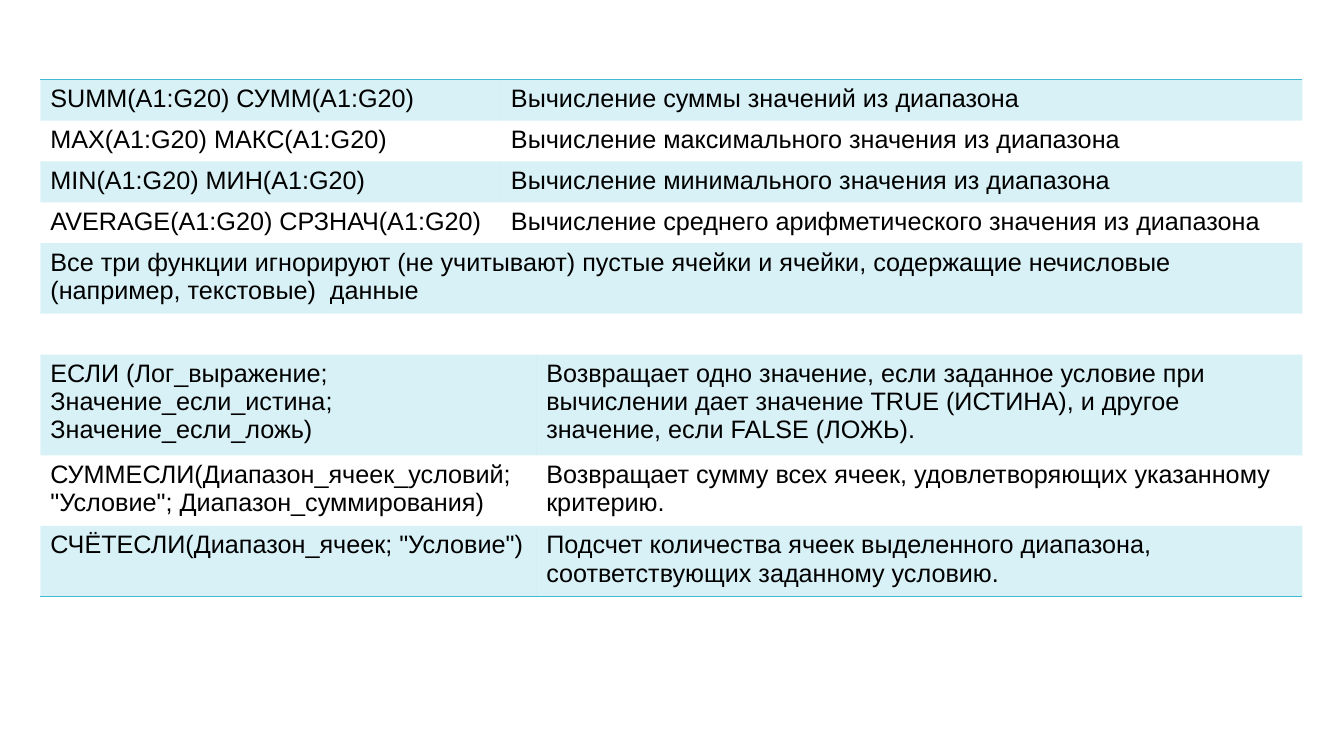
from lxml import etree
from pptx import Presentation
from pptx.dml.color import RGBColor
from pptx.oxml.ns import qn
from pptx.util import Pt

COLORS = {"accent": "40BAD2", "text": "000000"}
FONT = "Arial"
NO_STYLE = "{2D5ABB26-0587-4C30-8999-92F81FD0307C}"
COL_WIDTHS = [329, 25.2, 547.2]
LINE_HEIGHTS = {1: 29.2, 2: 50.4, 3: 72}

# Each row: number of text lines, then {first column: (columns spanned, text)}
ROWS = [
    (1, {0: (1, "SUMM(A1:G20) СУММ(A1:G20)"),
         1: (2, "Вычисление суммы значений из диапазона")}),
    (1, {0: (1, "MAX(A1:G20) МАКС(A1:G20)"),
         1: (2, "Вычисление максимального значения из диапазона")}),
    (1, {0: (1, "MIN(A1:G20) МИН(A1:G20)"),
         1: (2, "Вычисление минимального значения из диапазона")}),
    (1, {0: (1, "AVERAGE(A1:G20) СРЗНАЧ(A1:G20)"),
         1: (2, "Вычисление среднего арифметического значения из диапазона")}),
    (2, {0: (3, "Все три функции игнорируют (не учитывают) пустые ячейки и ячейки, "
                "содержащие нечисловые (например, текстовые)  данные")}),
    (1, {0: (2, ""), 2: (1, "")}),
    (3, {0: (2, "ЕСЛИ (Лог_выражение; Значение_если_истина; Значение_если_ложь)"),
         2: (1, "Возвращает одно значение, если заданное условие при вычислении дает "
                "значение TRUE (ИСТИНА), и другое значение, если FALSE (ЛОЖЬ).")}),
    (2, {0: (2, "СУММЕСЛИ(Диапазон_ячеек_условий; \"Условие\"; Диапазон_суммирования)"),
         2: (1, "Возвращает сумму всех ячеек, удовлетворяющих указанному критерию.")}),
    (2, {0: (2, "СЧЁТЕСЛИ(Диапазон_ячеек; \"Условие\")"),
         2: (1, "Подсчет количества ячеек выделенного диапазона, "
                "соответствующих заданному условию.")}),
]


def set_text(cell, text):
    p = cell.text_frame.paragraphs[0]
    p.text = text
    p.font.size = Pt(18)
    for r in p.runs:
        r.font.name = FONT
        r.font.size = Pt(18)
        r.font.color.rgb = RGBColor.from_string(COLORS["text"])


def set_fill(cell, tinted):
    """Fill a cell with the accent at 20 % opacity, or leave it clear."""
    if not tinted:
        cell.fill.background()
        return
    cell.fill.solid()
    cell.fill.fore_color.rgb = RGBColor.from_string(COLORS["accent"])
    color = cell._tc.tcPr.find(qn("a:solidFill")).find(qn("a:srgbClr"))
    etree.SubElement(color, qn("a:alpha"), val="20000")


def set_border(cell, side):
    ln = etree.Element(qn("a:" + side), w=str(Pt(1)))
    fill = etree.SubElement(ln, qn("a:solidFill"))
    etree.SubElement(fill, qn("a:srgbClr"), val=COLORS["accent"])
    cell._tc.get_or_add_tcPr().insert(0, ln)


def add_function_table(slide, left, top):
    heights = [LINE_HEIGHTS[lines] for lines, _ in ROWS]
    frame = slide.shapes.add_table(len(ROWS), len(COL_WIDTHS), Pt(left), Pt(top),
                                   Pt(sum(COL_WIDTHS)), Pt(sum(heights)))
    table = frame.table
    table.first_row = table.horz_banding = False
    table._tbl.tblPr.find(qn("a:tableStyleId")).text = NO_STYLE
    for column, width in zip(table.columns, COL_WIDTHS):
        column.width = Pt(width)
    for i, (_, entries) in enumerate(ROWS):
        table.rows[i].height = Pt(heights[i])
        for cell in table.rows[i].cells:
            set_fill(cell, i % 2 == 0)
            if i == 0:
                set_border(cell, "lnT")
            if i == len(ROWS) - 1:
                set_border(cell, "lnB")
        for j, (span, text) in entries.items():
            cell = table.cell(i, j)
            if span > 1:
                cell.merge(table.cell(i, j + span - 1))
            set_text(cell, text)


def main():
    prs = Presentation()
    prs.slide_width, prs.slide_height = Pt(960), Pt(540)
    slide = prs.slides.add_slide(prs.slide_layouts[6])
    add_function_table(slide, 28.8, 56.9)
    prs.save("out.pptx")


if __name__ == "__main__":
    main()
